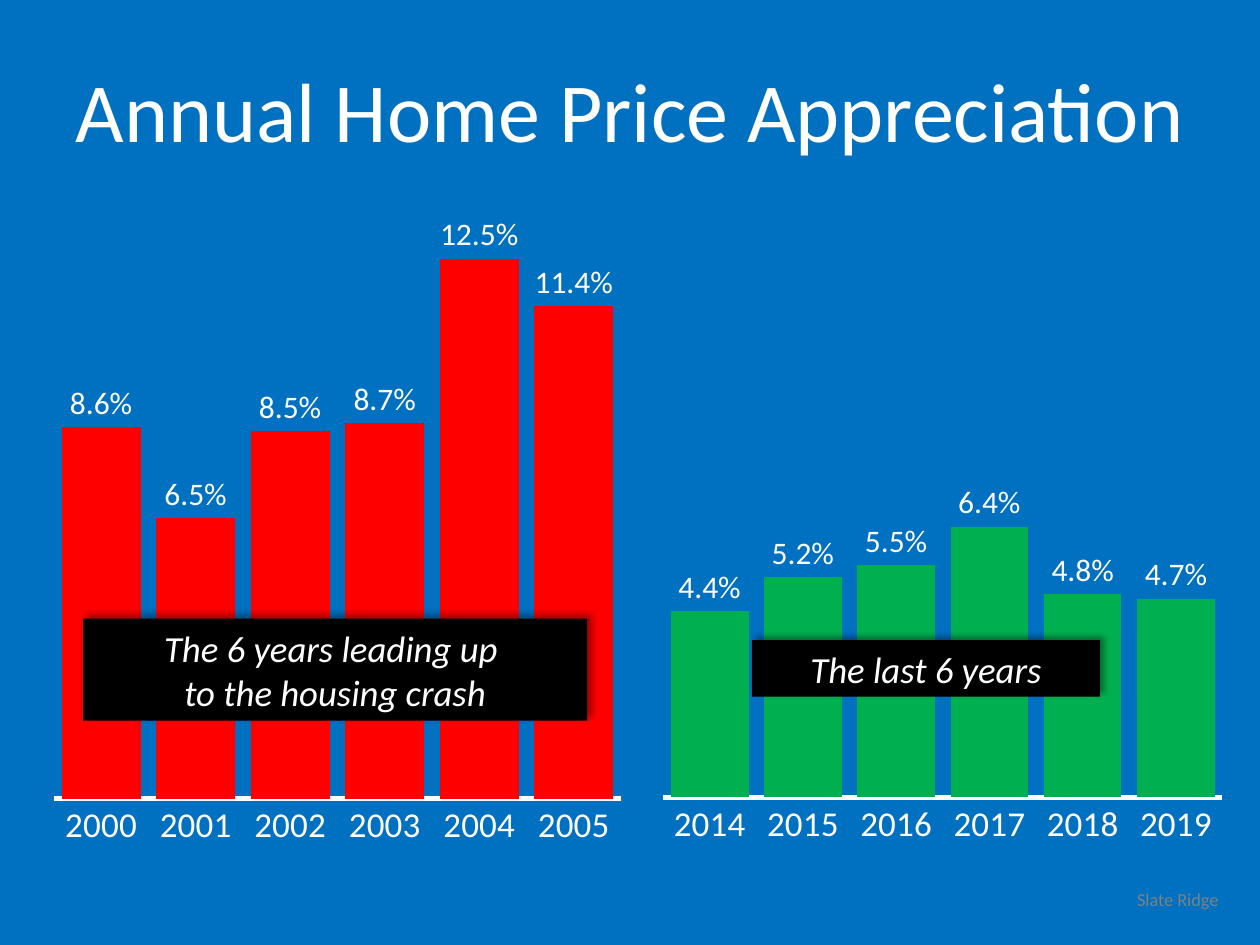
from lxml import etree
from pptx import Presentation
from pptx import util as u
from pptx.chart.data import CategoryChartData
from pptx.dml.color import RGBColor
from pptx.enum import chart as ch
from pptx.enum import shapes, text
from pptx.oxml import parse_xml
from pptx.oxml.ns import nsdecls, qn

FONT = "Calibri"
WHITE = "FFFFFF"
TITLE = ("Annual Home Price Appreciation", (0, 0.41, 10, 0.91))
SOURCE = ("Slate Ridge", (8.55, 7, 1.22, 0.28))
CHARTS = [
    {"box": (0.33, 1.54, 4.66, 5.18), "plot": (0.021, 0.966), "color": "FF0000",
     "first_year": 2000, "rates": (0.086, 0.065, 0.085, 0.087, 0.125, 0.114)},
    {"box": (5.1, 1.63, 4.66, 5.08), "plot": (0.035, 0.953), "color": "00B050",
     "first_year": 2014, "rates": (0.044, 0.052, 0.055, 0.064, 0.048, 0.047)},
]
PLOT_HEIGHT = 0.93
CAPTIONS = [
    (["The 6 years leading up ", "to the housing crash"], (0.66, 4.91, 4, 0.81)),
    (["The last 6 years"], (5.97, 5.08, 2.76, 0.45)),
]


def color(value):
    return RGBColor.from_string(value)


def inches(box):
    return [u.Inches(value) for value in box]


def style_font(font, size, value=WHITE, italic=False):
    font.name = FONT
    font.size = u.Pt(size)
    font.color.rgb = color(value)
    font.italic = italic


def write(shape, lines, size, value=WHITE, align=text.PP_ALIGN.CENTER, italic=False):
    frame = shape.text_frame
    frame.text = "\n".join(lines)
    frame.word_wrap = True
    frame.auto_size = text.MSO_AUTO_SIZE.NONE
    for paragraph in frame.paragraphs:
        paragraph.alignment = align
        for run in paragraph.runs:
            style_font(run.font, size, value, italic)


def add_shadow(shape):
    shape.shadow.inherit = False
    effects = shape._element.spPr.find(qn("a:effectLst"))
    effects.append(parse_xml(
        f'<a:outerShdw {nsdecls("a")} blurRad="{u.Pt(4)}" dist="{u.Pt(3)}" '
        f'dir="{315 * 60000}" algn="bl" rotWithShape="0"><a:srgbClr val="000000">'
        '<a:alpha val="40000"/></a:srgbClr></a:outerShdw>'))


def set_plot_area(chart, left, width):
    plot_area = chart._chartSpace.chart.plotArea
    for old in plot_area.findall(qn("c:layout")):
        plot_area.remove(old)
    layout = etree.Element(qn("c:layout"))
    manual = etree.SubElement(layout, qn("c:manualLayout"))
    settings = [("layoutTarget", "inner"), ("xMode", "edge"), ("yMode", "edge"),
                ("x", left), ("y", 0), ("w", width), ("h", PLOT_HEIGHT)]
    for name, value in settings:
        etree.SubElement(manual, qn(f"c:{name}")).set("val", str(value))
    plot_area.insert(0, layout)


def add_price_chart(slide, item):
    data = CategoryChartData(number_format="0.0%")
    data.categories = [str(item["first_year"] + i) for i in range(len(item["rates"]))]
    data.add_series("Series 1", item["rates"])
    chart = slide.shapes.add_chart(
        ch.XL_CHART_TYPE.COLUMN_CLUSTERED, *inches(item["box"]), data).chart
    chart.has_legend = False
    chart.has_title = False
    style_font(chart.font, 10, "000000")

    axis = chart.category_axis
    axis.major_tick_mark = ch.XL_TICK_MARK.NONE
    axis.format.line.color.rgb = color(WHITE)
    axis.format.line.width = u.Pt(3)
    style_font(axis.tick_labels.font, 20)

    scale = chart.value_axis
    scale.minimum_scale, scale.maximum_scale = 0, 0.14
    scale.has_major_gridlines = False
    scale.visible = False

    plot = chart.plots[0]
    plot.gap_width, plot.overlap = 20, -27
    plot.vary_by_categories = False
    series = plot.series[0]
    series.format.fill.solid()
    series.format.fill.fore_color.rgb = color(item["color"])
    labels = series.data_labels
    labels.show_value = True
    labels.position = ch.XL_LABEL_POSITION.OUTSIDE_END
    labels.number_format = "0.0%"
    labels.number_format_is_linked = False
    style_font(labels.font, 18)
    set_plot_area(chart, *item["plot"])


def main():
    presentation = Presentation()
    presentation.slide_width, presentation.slide_height = inches((10, 7.5))
    slide = presentation.slides.add_slide(presentation.slide_layouts[5])
    slide.background.fill.solid()
    slide.background.fill.fore_color.rgb = color("0070C0")

    title = slide.shapes.title
    title.left, title.top, title.width, title.height = inches(TITLE[1])
    write(title, [TITLE[0]], 48)

    source = slide.shapes.add_textbox(*inches(SOURCE[1]))
    write(source, [SOURCE[0]], 10.5, "808080", text.PP_ALIGN.RIGHT)

    for item in CHARTS:
        add_price_chart(slide, item)

    for lines, box in CAPTIONS:
        caption = slide.shapes.add_shape(shapes.MSO_SHAPE.RECTANGLE, *inches(box))
        caption.fill.solid()
        caption.fill.fore_color.rgb = color("000000")
        caption.line.fill.background()
        add_shadow(caption)
        write(caption, lines, 21, italic=True)

    presentation.save("out.pptx")


if __name__ == "__main__":
    main()
